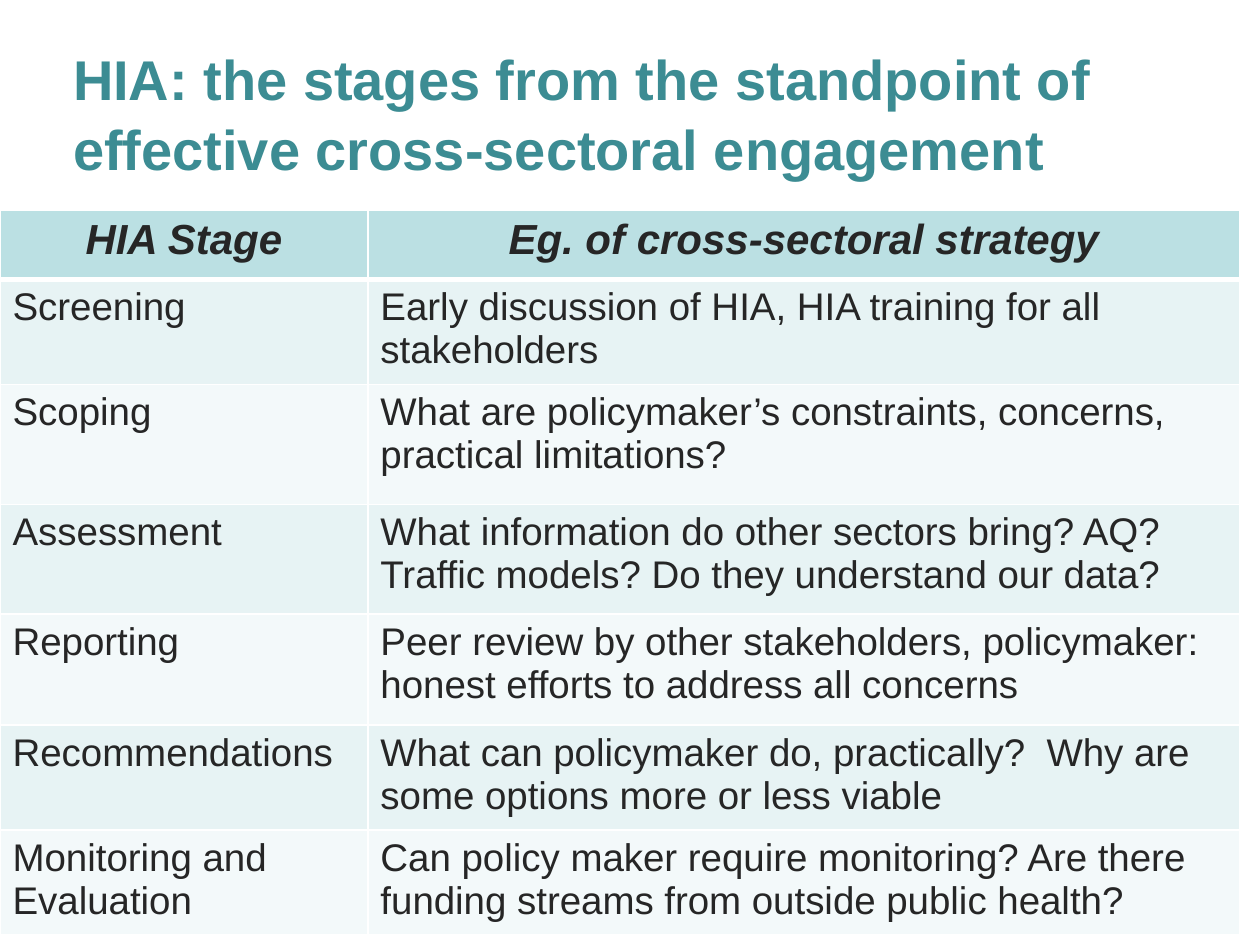
from pptx import Presentation
from pptx.dml.color import RGBColor
from pptx.enum import text
from pptx.oxml import parse_xml
from pptx.oxml.ns import nsdecls
from pptx.util import Inches, Pt

TEAL = RGBColor(0x3C, 0x8C, 0x93)
INK = RGBColor(0x26, 0x26, 0x26)
HEADER = RGBColor(0xBB, 0xE0, 0xE3)
BAND_DARK = RGBColor(0xE7, 0xF3, 0xF4)
BAND_LIGHT = RGBColor(0xF3, 0xF9, 0xFA)
WHITE = RGBColor(0xFF, 0xFF, 0xFF)

STAGES = [
    ("HIA Stage", "Eg. of cross-sectoral strategy"),
    ("Screening", "Early discussion of HIA, HIA training for all stakeholders"),
    ("Scoping", "What are policymaker’s constraints, concerns, practical limitations?"),
    ("Assessment", "What information do other sectors bring? AQ? "
                   "Traffic models? Do they understand our data?"),
    ("Reporting", "Peer review by other stakeholders, policymaker: "
                  "honest efforts to address all concerns"),
    ("Recommendations", "What can policymaker do, practically?  "
                        "Why are some options more or less viable"),
    ("Monitoring and Evaluation", "Can policy maker require monitoring? "
                                  "Are there funding streams from outside public health?"),
]
COL_WIDTHS = [2.92, 6.92]
ROW_HEIGHTS = [0.55, 0.53, 0.95, 0.87, 0.88, 0.55, 0.55]


class SlideBuilder:
    """Holds the text style and the current slide."""
    font = "Arial"

    def __init__(self, s):
        self.s = s

    def style(self, p, size, color, bold=False, italic=False):
        for r in p.runs:
            f = r.font
            f.name, f.size, f.bold, f.italic = self.font, Pt(size), bold, italic
            f.color.rgb = color

    def title(self, words, left, top, width, height):
        tf = self.s.shapes.add_textbox(
            Inches(left), Inches(top), Inches(width), Inches(height)).text_frame
        tf.word_wrap = True
        tf.margin_left = tf.margin_top = tf.margin_right = tf.margin_bottom = 0
        tf.text = words
        p = tf.paragraphs[0]
        p.line_spacing = 1.04
        self.style(p, 32, TEAL, bold=True)

    def borders(self, cell, bottom):
        tcPr = cell._tc.get_or_add_tcPr()
        edges = {"lnL": 1, "lnR": 1, "lnT": 1, "lnB": bottom}
        for i, (edge, width) in enumerate(edges.items()):
            tcPr.insert(i, parse_xml(
                f'<a:{edge} {nsdecls("a")} w="{Pt(width)}"><a:solidFill>'
                f'<a:srgbClr val="{WHITE}"/></a:solidFill></a:{edge}>'))

    def cell(self, cell, words, row):
        header = row == 0
        cell.fill.solid()
        cell.fill.fore_color.rgb = (
            HEADER if header else BAND_DARK if row % 2 else BAND_LIGHT)
        self.borders(cell, bottom=3 if header else 1)
        cell.text = words
        p = cell.text_frame.paragraphs[0]
        if header:
            p.alignment = text.PP_ALIGN.CENTER
        self.style(p, 24 if header else 22, INK, bold=header, italic=header)

    def table(self, rows, left, top, widths, heights):
        table = self.s.shapes.add_table(
            len(rows), len(widths), Inches(left), Inches(top),
            Inches(sum(widths)), Inches(sum(heights))).table
        for col, width in zip(table.columns, widths):
            col.width = Inches(width)
        for i, (row, height) in enumerate(zip(rows, heights)):
            table.rows[i].height = Inches(height)
            for j, words in enumerate(row):
                self.cell(table.cell(i, j), words, i)


def main():
    prs = Presentation()
    prs.slide_width, prs.slide_height = Inches(10), Inches(7.5)
    slide = SlideBuilder(prs.slides.add_slide(prs.slide_layouts[6]))

    # Title
    slide.title("HIA: the stages from the standpoint of effective "
                "cross-sectoral engagement", 0.58, 0.33, 8.67, 0.67)

    # Stages and strategies
    slide.table(STAGES, 0, 1.67, COL_WIDTHS, ROW_HEIGHTS)

    prs.save("out.pptx")


if __name__ == "__main__":
    main()
